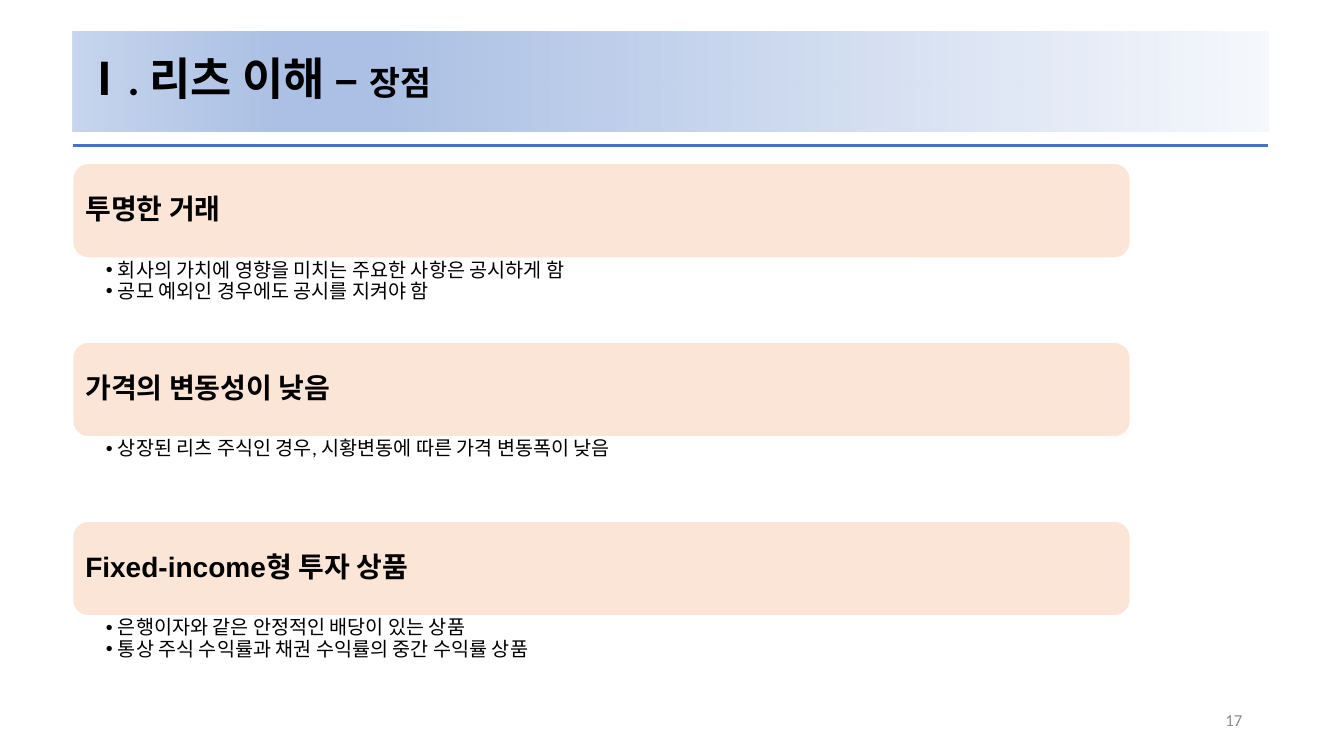
import pptx
import pptx.util
import pptx.oxml.ns
import pptx.dml.color
import pptx.enum.shapes
import pptx.enum.text
from lxml import etree

Inches, Pt = pptx.util.Inches, pptx.util.Pt
qn = pptx.oxml.ns.qn
ANCHOR = pptx.enum.text.MSO_ANCHOR
ALIGN = pptx.enum.text.PP_ALIGN
COLORS = {"text": "000000", "rule": "4472C4", "panel": "FBE5D6",
          "outline": "FFFFFF", "number": "8C8C8C", "band_pale": "F6F8FC",
          "band_deep": "ABC0E4", "band_soft": "C7D5ED"}
# Position in percent, colour, opacity in percent
TITLE_STOPS = [(0, "band_pale", 97), (74, "band_deep", 100),
               (83, "band_deep", 100), (100, "band_soft", 100)]
TITLE_RUNS = [("Ⅰ", 32, "Noto Sans CJK KR"), (". 리츠 이해 – ", 32, "Calibri"),
              ("장점", 24, "Calibri")]
BENEFITS = [
    ("투명한 거래", ["회사의 가치에 영향을 미치는 주요한 사항은 공시하게 함",
                "공모 예외인 경우에도 공시를 지켜야 함"]),
    ("가격의 변동성이 낮음", ["상장된 리츠 주식인 경우, 시황변동에 따른 가격 변동폭이 낮음"]),
    ("Fixed-income형 투자 상품", ["은행이자와 같은 안정적인 배당이 있는 상품",
                             "통상 주식 수익률과 채권 수익률의 중간 수익률 상품"]),
]


def rgb(name):
    return pptx.dml.color.RGBColor.from_string(COLORS[name])


def place(sp, x, y, w, h):
    sp.left, sp.top, sp.width, sp.height = map(Inches, (x, y, w, h))


def set_frame(tf, anchor, insets=(0.1, 0.05, 0.1, 0.05)):
    tf.word_wrap = True
    tf.auto_size = pptx.enum.text.MSO_AUTO_SIZE.NONE
    tf.vertical_anchor = anchor
    (tf.margin_left, tf.margin_top,
     tf.margin_right, tf.margin_bottom) = map(Inches, insets)


def format_paragraph(p, font, size, color="text", bold=False, align=ALIGN.LEFT):
    p.alignment = align
    p.line_spacing = 0.9
    p.space_before = p.space_after = Pt(0)
    p.font.name, p.font.size, p.font.bold = font, Pt(size), bold
    p.font.color.rgb = rgb(color)


def add_bullet(p):
    pPr = p._p.get_or_add_pPr()
    pPr.set("marL", str(Inches(0.12)))
    pPr.set("indent", str(-Inches(0.12)))
    bullet = etree.Element(qn("a:buChar"), char="•")
    pPr.find(qn("a:defRPr")).addprevious(bullet)


def fill_gradient(sp, stops, angle):
    sp.fill.gradient()
    sp.fill.gradient_angle = angle
    gs_list = sp._element.spPr.find(".//" + qn("a:gsLst"))
    for gs in list(gs_list):
        gs_list.remove(gs)
    for pos, color, opacity in stops:
        gs = etree.SubElement(gs_list, qn("a:gs"), pos=str(pos * 1000))
        clr = etree.SubElement(gs, qn("a:srgbClr"), val=COLORS[color])
        if opacity < 100:
            etree.SubElement(clr, qn("a:alpha"), val=str(opacity * 1000))


def add_title(s, x, y, w, h):
    sp = s.shapes.title
    place(sp, x, y, w, h)
    fill_gradient(sp, TITLE_STOPS, 180)
    set_frame(sp.text_frame, ANCHOR.MIDDLE)
    p = sp.text_frame.paragraphs[0]
    format_paragraph(p, "Calibri", 32, bold=True)
    for text, size, font in TITLE_RUNS:
        r = p.add_run()
        r.text, r.font.size, r.font.name = text, Pt(size), font
    # Rule below the title
    rule_y = y + h + 0.14
    line = s.shapes.add_connector(
        pptx.enum.shapes.MSO_CONNECTOR.STRAIGHT,
        *map(Inches, (x, rule_y, x + w, rule_y)))
    line.line.color.rgb = rgb("rule")
    line.line.width = Pt(2.25)
    etree.SubElement(line._element.spPr, qn("a:effectLst"))


def add_benefit(s, body, heading, points, x, y, w, h):
    panel_h = 0.94
    # Heading panel
    sp = s.shapes.add_shape(pptx.enum.shapes.MSO_SHAPE.ROUNDED_RECTANGLE,
                            *map(Inches, (x, y, w, panel_h)))
    sp.shadow.inherit = False
    sp.fill.solid()
    sp.fill.fore_color.rgb = rgb("panel")
    sp.line.color.rgb = rgb("outline")
    sp.line.width = Pt(1)
    set_frame(sp.text_frame, ANCHOR.MIDDLE, (0.08, 0.08, 0.08, 0.08))
    sp.text_frame.text = heading
    format_paragraph(sp.text_frame.paragraphs[0], "Arial", 20, bold=True)
    # Bulleted points
    place(body, x, y + panel_h, w, h - panel_h)
    tf = body.text_frame
    set_frame(tf, ANCHOR.TOP, (0.33, 0.02, 0.11, 0.02))
    tf.text = "\n".join(points)
    for p in tf.paragraphs:
        format_paragraph(p, "Calibri", 14)
        add_bullet(p)


def add_page_number(s, number, x, y, w, h):
    tf = s.shapes.add_textbox(*map(Inches, (x, y, w, h))).text_frame
    set_frame(tf, ANCHOR.MIDDLE)
    tf.text = number
    format_paragraph(tf.paragraphs[0], "Calibri", 12, "number", align=ALIGN.RIGHT)


def main():
    prs = pptx.Presentation()
    prs.slide_width, prs.slide_height = Inches(13.33), Inches(7.5)
    s = prs.slides.add_slide(prs.slide_layouts.get_by_name("Comparison"))
    add_title(s, 0.72, 0.31, 11.86, 0.99)
    # One body placeholder per benefit
    bodies = [sp for sp in s.placeholders if sp.placeholder_format.idx > 0]
    pitch = 1.775
    for i, (body, (heading, points)) in enumerate(zip(bodies, BENEFITS)):
        add_benefit(s, body, heading, points, 0.72, 1.62 + i * pitch, 10.49, pitch)
    for spare in bodies[len(BENEFITS):]:
        spare._element.getparent().remove(spare._element)
    add_page_number(s, "17", 9.42, 6.95, 3, 0.4)
    prs.save("out.pptx")


if __name__ == "__main__":
    main()
